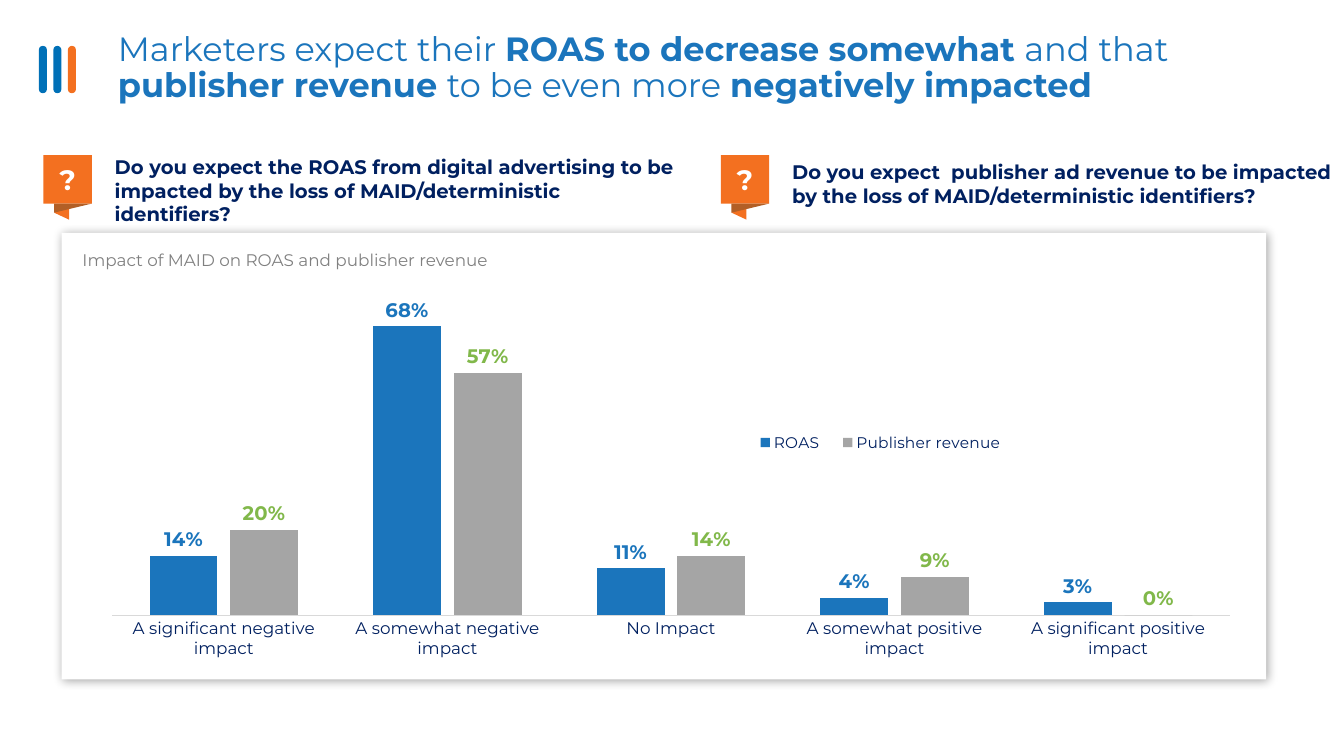
from lxml import etree
from pptx import Presentation, util as u
from pptx.chart.data import CategoryChartData
from pptx.dml.color import RGBColor
from pptx.enum import chart as ch, shapes as sh, text as tx
from pptx.oxml import parse_xml
from pptx.oxml.ns import nsdecls, qn

HUE = {"blue": "1B75BC", "bar": "0070B7", "orange": "F37020", "fold": "B25F26",
       "navy": "002060", "gray": "808080", "green": "81B84A", "silver": "A5A5A5",
       "axis": "D9D9D9", "white": "FFFFFF"}
RGB = {name: RGBColor.from_string(code) for name, code in HUE.items()}

deck = Presentation()
deck.slide_width, deck.slide_height = u.Inches(13.33), u.Inches(7.5)
page = deck.slides.add_slide(deck.slide_layouts[6])
COL, ROW = deck.slide_width / 100, deck.slide_height / 100


def area(x, y, w, h):
    """Turn percentages of the slide into a box in EMU."""
    return round(x * COL), round(y * ROW), round(w * COL), round(h * ROW)


def style(font, size, hue, bold=False):
    font.name, font.size, font.bold = "Montserrat", u.Pt(size), bold
    font.color.rgb = RGB[hue]


# Accent bars beside the title
for i, hue in enumerate(["bar", "bar", "orange"]):
    bar = page.shapes.add_shape(sh.MSO_SHAPE.ROUNDED_RECTANGLE,
                                *area(2.89 + i * 1.08, 6.07, 0.6, 6.27))
    bar.adjustments[0] = 0.5
    bar.shadow.inherit = False
    bar.fill.solid()
    bar.fill.fore_color.rgb = RGB[hue]
    bar.line.fill.background()

# Card behind the chart
card = page.shapes.add_shape(sh.MSO_SHAPE.ROUNDED_RECTANGLE,
                             *area(4.58, 30.8, 89.63, 59.07))
card.adjustments[0] = 0
card.fill.solid()
card.fill.fore_color.rgb = RGB["white"]
card.line.fill.background()
card.shadow.inherit = False
glow = card._element.spPr.find(qn("a:effectLst"))
glow.append(parse_xml(
    f'<a:outerShdw {nsdecls("a")} blurRad="88900" dist="25400" dir="2700000" '
    'algn="tl" rotWithShape="0"><a:srgbClr val="000000"><a:alpha val="35000"/>'
    '</a:srgbClr></a:outerShdw>'))

# Chart
data = CategoryChartData(number_format="0%")
data.categories = ["A significant negative impact", "A somewhat negative impact",
                   "No Impact", "A somewhat positive impact",
                   "A significant positive impact"]
data.add_series("ROAS", [0.14, 0.68, 0.11, 0.04, 0.03])
data.add_series("Publisher revenue", [0.2, 0.57, 0.14, 0.09, 0])
chart = page.shapes.add_chart(ch.XL_CHART_TYPE.COLUMN_CLUSTERED,
                              *area(3.23, 34.27, 89.63, 54.53), data).chart
chart.has_title = False
chart.font.name, chart.font.size = "Calibri", u.Pt(14)

plot = chart.plots[0]
plot.vary_by_categories = False
plot.gap_width, plot.overlap = 111, -19
for part, fill, ink in zip(plot.series, ["blue", "silver"], ["blue", "green"]):
    part.format.fill.solid()
    part.format.fill.fore_color.rgb = RGB[fill]
    tags = part.data_labels
    tags.show_value = True
    tags.number_format, tags.number_format_is_linked = "0%", False
    tags.position = ch.XL_LABEL_POSITION.OUTSIDE_END
    style(tags.font, 14, ink, True)

cats, vals = chart.category_axis, chart.value_axis
cats.major_tick_mark = ch.XL_TICK_MARK.NONE
cats.format.line.color.rgb = RGB["axis"]
cats.format.line.width = u.Pt(0.75)
style(cats.tick_labels.font, 12, "navy")
vals.minimum_scale, vals.maximum_scale = 0, 0.8
vals.has_major_gridlines = False
vals.visible = False

chart.has_legend = True
key = chart.legend
key.position = ch.XL_LEGEND_POSITION.BOTTOM
key.include_in_layout = False
style(key.font, 11, "navy")

places = [(chart._chartSpace.chart.plotArea, 0, "inner", (0.057, 0.04, 0.928, 0.824)),
          (key._element, 1, "", (0.58, 0.41, 0.23, 0.07))]
for host, spot, mode, shares in places:
    for old in host.findall(qn("c:layout")):
        host.remove(old)
    frame = parse_xml(f'<c:layout {nsdecls("c")}><c:manualLayout/></c:layout>')
    marks = [("layoutTarget", mode)] if mode else []
    marks += [("xMode", "edge"), ("yMode", "edge"), *zip("xywh", shares)]
    for tag, val in marks:
        etree.SubElement(frame[0], qn("c:" + tag)).set("val", str(val))
    host.insert(spot, frame)

# Question badges
for left in (3.23, 53.63):
    group = page.shapes.add_group_shape().shapes
    badge = group.add_shape(sh.MSO_SHAPE.RECTANGLE, *area(left, 20.53, 3.6, 6.4))
    tail = [(1.91, 6.8), (1.91, 8.53), (0.79, 7.6)]
    fold = [(0.79, 7.6), (0.79, 6.4), (3.6, 6.4)]
    parts = [(badge, "orange")]
    for points, hue in [(tail, "orange"), (fold, "fold")]:
        spots = [area(left + x, 20.53 + y, 0, 0)[:2] for x, y in points]
        pen = group.build_freeform(*spots[0])
        pen.add_line_segments(spots[1:], close=True)
        parts.append((pen.convert_to_shape(), hue))
    for part, hue in parts:
        part.shadow.inherit = False
        part.fill.solid()
        part.fill.fore_color.rgb = RGB[hue]
        part.line.fill.background()
    body = badge.text_frame
    body.margin_left = body.margin_right = body.margin_top = body.margin_bottom = 0
    body.vertical_anchor = tx.MSO_ANCHOR.MIDDLE
    body.text = "?"
    body.paragraphs[0].alignment = tx.PP_ALIGN.CENTER
    style(body.paragraphs[0].runs[0].font, 20, "white", True)

# Caption and questions
notes = [
    ((5.4, 32.4, 37.2, 4), 12, "gray", False,
     "Impact of MAID on ROAS and publisher revenue"),
    ((7.8, 19.87, 43.28, 7.6), 14, "navy", True,
     "Do you expect the ROAS from digital advertising to be impacted "
     "by the loss of MAID/deterministic identifiers?"),
    ((58.2, 20.53, 42.15, 7.6), 14, "navy", True,
     "Do you expect  publisher ad revenue to be impacted "
     "by the loss of MAID/deterministic identifiers?"),
]
for spot, size, hue, bold, words in notes:
    body = page.shapes.add_textbox(*area(*spot)).text_frame
    body.word_wrap = True
    body.auto_size = tx.MSO_AUTO_SIZE.SHAPE_TO_FIT_TEXT
    body.text = words
    style(body.paragraphs[0].runs[0].font, size, hue, bold)

# Title, with every second run in bold
body = page.shapes.add_textbox(*area(8.03, 4.27, 80.93, 9.6)).text_frame
body.word_wrap = True
body.vertical_anchor = tx.MSO_ANCHOR.MIDDLE
head = body.paragraphs[0]
head.line_spacing = 0.9
for i, words in enumerate(["Marketers expect their ", "ROAS to decrease somewhat ",
                           "and that ", "publisher revenue ",
                           "to be even more ", "negatively impacted"]):
    run = head.add_run()
    run.text = words
    style(run.font, 24, "blue", i % 2 == 1)

deck.save("out.pptx")
